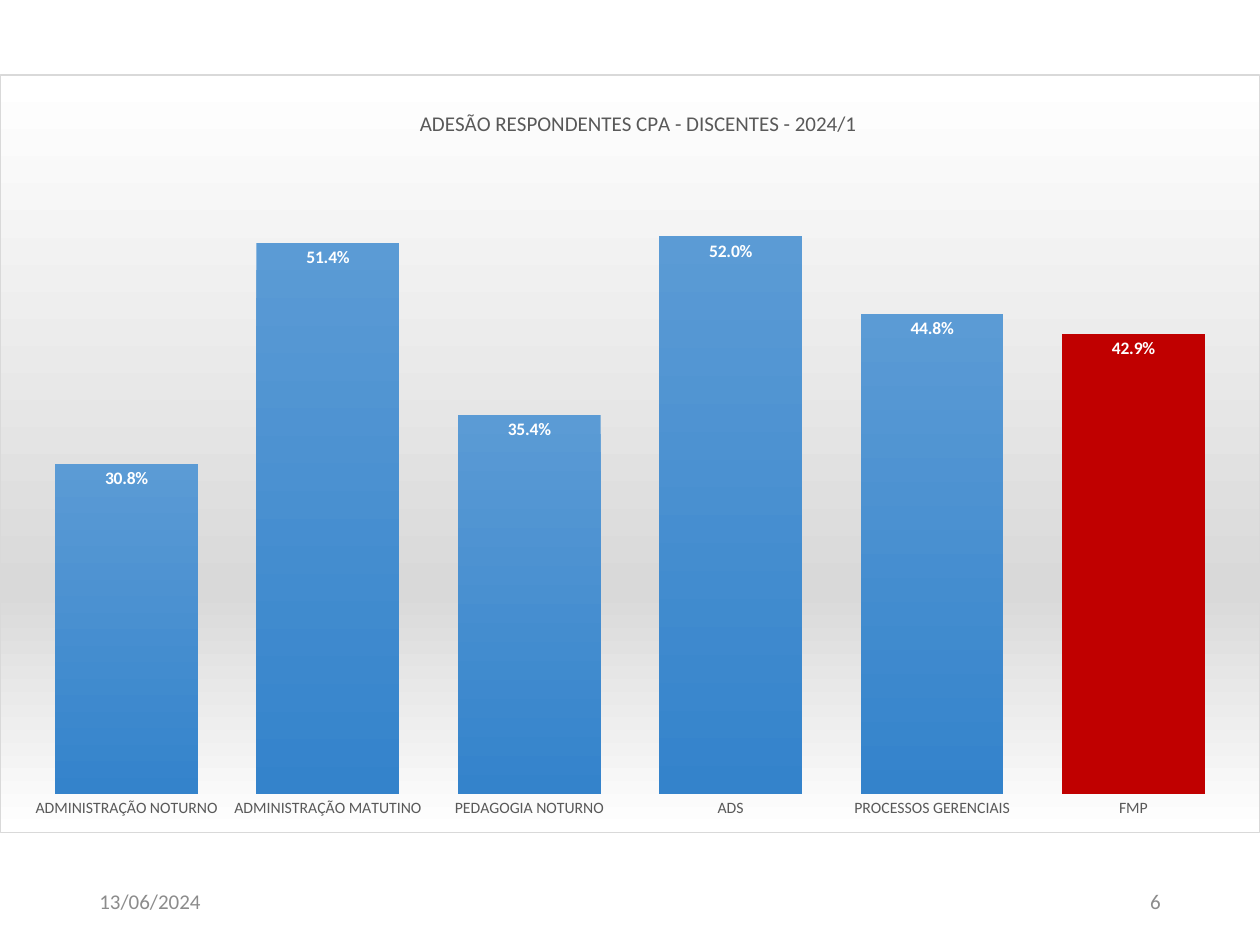
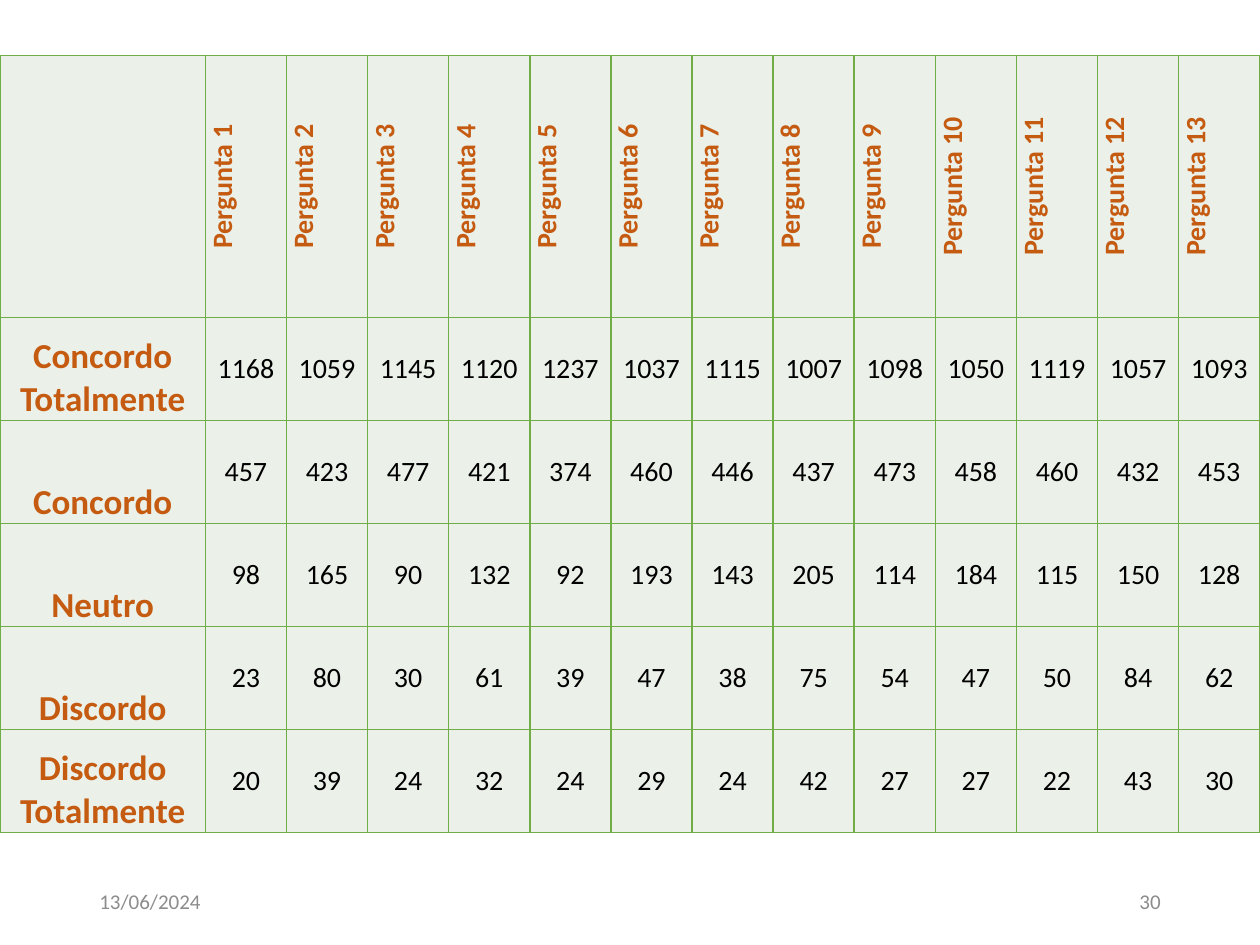
import pptx
import pptx.chart.data
import pptx.dml.color
import pptx.enum.chart
import pptx.enum.text
import pptx.oxml
import pptx.oxml.ns
import pptx.util

RGBColor = pptx.dml.color.RGBColor
Pt = pptx.util.Pt
ALIGN = pptx.enum.text.PP_ALIGN
ANCHOR = pptx.enum.text.MSO_ANCHOR

WHITE = RGBColor(0xFF, 0xFF, 0xFF)
BLACK = RGBColor(0x00, 0x00, 0x00)
GREY = RGBColor(0x8C, 0x8C, 0x8C)
DARK_GREY = RGBColor(0x59, 0x59, 0x59)
SILVER = RGBColor(0xD9, 0xD9, 0xD9)
SKY = RGBColor(0x5B, 0x9B, 0xD5)
BLUE = RGBColor(0x34, 0x83, 0xCB)
RED = RGBColor(0xC0, 0x00, 0x00)
GREEN = RGBColor(0x70, 0xAD, 0x47)
PALE_GREEN = RGBColor(0xEB, 0xF1, 0xE9)
ORANGE = RGBColor(0xC5, 0x5A, 0x11)

FONT = "Calibri"
DATE = "13/06/2024"
FOOTER = {"size": 12, "color": GREY}
CHART_TITLE = {"size": 12, "color": DARK_GREY, "bold": False}
CATEGORY = {"size": 9, "color": DARK_GREY}
VALUE_LABEL = {"size": 10, "color": WHITE, "bold": True}
QUESTION = {"size": 16, "color": ORANGE, "bold": True}
ANSWER = {"size": 20, "color": ORANGE, "bold": True}
COUNT = {"size": 16, "color": BLACK, "bold": False}

ADHESION = {
    "ADMINISTRAÇÃO NOTURNO": 0.308,
    "ADMINISTRAÇÃO MATUTINO": 0.514,
    "PEDAGOGIA NOTURNO": 0.354,
    "ADS": 0.52,
    "PROCESSOS GERENCIAIS": 0.448,
    "FMP": 0.429,
}
ANSWERS = {
    "Concordo Totalmente": [1168, 1059, 1145, 1120, 1237, 1037, 1115,
                            1007, 1098, 1050, 1119, 1057, 1093],
    "Concordo": [457, 423, 477, 421, 374, 460, 446, 437, 473, 458, 460, 432, 453],
    "Neutro": [98, 165, 90, 132, 92, 193, 143, 205, 114, 184, 115, 150, 128],
    "Discordo": [23, 80, 30, 61, 39, 47, 38, 75, 54, 47, 50, 84, 62],
    "Discordo Totalmente": [20, 39, 24, 32, 24, 29, 24, 42, 27, 27, 22, 43, 30],
}


def set_font(font, style):
    for name, value in {"name": FONT, **style}.items():
        if name == "color":
            font.color.rgb = value
        else:
            setattr(font, name, Pt(value) if name == "size" else value)


def element(xml, prefix="a"):
    """Parse one XML element, declaring the drawing and chart namespaces."""
    tag, rest = xml.split(">", 1)
    slash = "/" if tag.endswith("/") else ""
    names = pptx.oxml.ns.nsdecls("a", "c")
    return pptx.oxml.parse_xml(f"{tag.rstrip('/')} {names}{slash}>{rest}")


def gradient(stops):
    """XML of a top-to-bottom gradient through (percent, colour) stops."""
    marks = "".join(f'<a:gs pos="{pos * 1000}"><a:srgbClr val="{color}"/></a:gs>'
                    for pos, color in stops)
    return f'<a:gradFill><a:gsLst>{marks}</a:gsLst><a:lin ang="5400000" scaled="0"/></a:gradFill>'


def line(tag, color, points):
    return (f'<a:{tag} w="{Pt(points)}"><a:solidFill><a:srgbClr val="{color}"/>'
            f'</a:solidFill></a:{tag}>')


def manual_layout(target="", **shares):
    """Layout element placing a chart part at shares of the chart's size."""
    inner = f'<c:layoutTarget val="{target}"/>' if target else ""
    inner += "".join(f'<c:{k}Mode val="edge"/>' for k in "xy")
    inner += "".join(f'<c:{k} val="{v}"/>' for k, v in shares.items())
    return element(f"<c:layout><c:manualLayout>{inner}</c:manualLayout></c:layout>")


class Deck:
    """Slides on a grid of 100 columns by 100 rows."""

    def __init__(self):
        self.prs = pptx.Presentation()
        self.prs.slide_width = pptx.util.Inches(10)
        self.prs.slide_height = pptx.util.Inches(7.5)
        self.s = None

    def cols(self, n):
        return round(self.prs.slide_width * n / 100)

    def rows(self, n):
        return round(self.prs.slide_height * n / 100)

    def box(self, col, row, width, height):
        return self.cols(col), self.rows(row), self.cols(width), self.rows(height)

    def slide(self, number):
        self.s = self.prs.slides.add_slide(self.prs.slide_layouts[6])
        self.text(DATE, 6.9, ALIGN.LEFT)
        self.text(str(number), 70.6, ALIGN.RIGHT)

    def text(self, text, col, align):
        """Footer text starting at a column."""
        tf = self.s.shapes.add_textbox(*self.box(col, 92.67, 22.5, 5.33)).text_frame
        tf.word_wrap = True
        tf.vertical_anchor = ANCHOR.MIDDLE
        p = tf.paragraphs[0]
        p.alignment = align
        r = p.add_run()
        r.text = text
        set_font(r.font, FOOTER)

    def column_chart(self, title, values, box):
        """Percent columns, with the last one highlighted."""
        data = pptx.chart.data.CategoryChartData(number_format="0.0%")
        data.categories = list(values)
        data.add_series("Series 1", list(values.values()))
        chart = self.s.shapes.add_chart(
            pptx.enum.chart.XL_CHART_TYPE.COLUMN_CLUSTERED, *self.box(*box), data).chart
        set_font(chart.font, {"size": 10, "color": BLACK})
        chart.has_legend = False

        chart.has_title = True
        tf = chart.chart_title.text_frame
        tf.text = title
        set_font(tf.paragraphs[0].runs[0].font, CHART_TITLE)
        title_xml = chart.chart_title._element
        for old in title_xml.findall(pptx.oxml.ns.qn("c:layout")):
            title_xml.remove(old)
        title_xml.find(pptx.oxml.ns.qn("c:tx")).addnext(manual_layout(x=0.33, y=0.04))

        plot_area = chart._chartSpace.chart.plotArea
        for old in plot_area.findall(pptx.oxml.ns.qn("c:layout")):
            plot_area.remove(old)
        plot_area.insert(0, manual_layout("inner", x=0.02, y=0.1, w=0.96, h=0.85))

        axis = chart.category_axis
        axis.major_tick_mark = pptx.enum.chart.XL_TICK_MARK.NONE
        axis.format.line.fill.background()
        set_font(axis.tick_labels.font, CATEGORY)
        axis = chart.value_axis
        axis.has_major_gridlines = False
        axis.minimum_scale, axis.maximum_scale = 0, 0.6
        axis.visible = False

        plot = chart.plots[0]
        plot.gap_width = 41
        plot.vary_by_categories = False
        plot.has_data_labels = True
        labels = plot.data_labels
        for name, value in {"show_value": True, "number_format": "0.0%",
                            "number_format_is_linked": False,
                            "position": pptx.enum.chart.XL_LABEL_POSITION.INSIDE_END}.items():
            setattr(labels, name, value)
        set_font(labels.font, VALUE_LABEL)

        series = plot.series[0]
        series.invert_if_negative = False
        series._element.get_or_add_spPr().append(element(gradient([(0, SKY), (100, BLUE)])))
        fill = series.points[len(values) - 1].format.fill
        fill.solid()
        fill.fore_color.rgb = RED

        backdrop = gradient([(0, WHITE), (68, SILVER), (100, WHITE)])
        chart._chartSpace.chart.addnext(
            element(f"<c:spPr>{backdrop}{line('ln', SILVER, 0.75)}</c:spPr>"))

    def cell(self, cell, text, style, anchor=ANCHOR.MIDDLE, vertical=False):
        tc_pr = cell._tc.get_or_add_tcPr()
        for tag in ("lnL", "lnR", "lnT", "lnB"):
            tc_pr.append(element(line(tag, GREEN, 1)))
        cell.fill.solid()
        cell.fill.fore_color.rgb = PALE_GREEN
        side = pptx.util.Inches(0.03)
        for name, value in {"margin_left": side, "margin_right": side, "margin_top": 0,
                            "margin_bottom": 0, "vertical_anchor": anchor}.items():
            setattr(cell, name, value)
        if vertical:
            tc_pr.set("vert", "vert270")
        if text:
            p = cell.text_frame.paragraphs[0]
            p.alignment = ALIGN.CENTER
            r = p.add_run()
            r.text = text
            set_font(r.font, style)

    def answer_table(self, answers, box, first_col, first_row):
        """Answers down the side, questions as upright headings."""
        questions = len(next(iter(answers.values())))
        table = self.s.shapes.add_table(
            len(answers) + 1, questions + 1, *self.box(*box)).table
        table.first_row = table.horz_banding = False
        width, height = box[2:]
        for i, column in enumerate(table.columns):
            column.width = self.cols((width - first_col) / questions if i else first_col)
        for i, row in enumerate(table.rows):
            row.height = self.rows((height - first_row) / len(answers) if i else first_row)

        self.cell(table.cell(0, 0), "", QUESTION)
        for j in range(1, questions + 1):
            self.cell(table.cell(0, j), f"Pergunta {j}", QUESTION, vertical=True)
        for i, (answer, counts) in enumerate(answers.items(), 1):
            self.cell(table.cell(i, 0), answer, ANSWER, ANCHOR.BOTTOM)
            for j, count in enumerate(counts, 1):
                self.cell(table.cell(i, j), str(count), COUNT)


def main():
    deck = Deck()
    deck.slide(6)
    deck.column_chart("ADESÃO RESPONDENTES CPA - DISCENTES - 2024/1", ADHESION,
                      (0, 7.87, 100, 80.27))
    deck.slide(30)
    deck.answer_table(ANSWERS, (0, 5.87, 100, 82.27), first_col=16.3, first_row=27.73)
    deck.prs.save("out.pptx")


if __name__ == "__main__":
    main()
